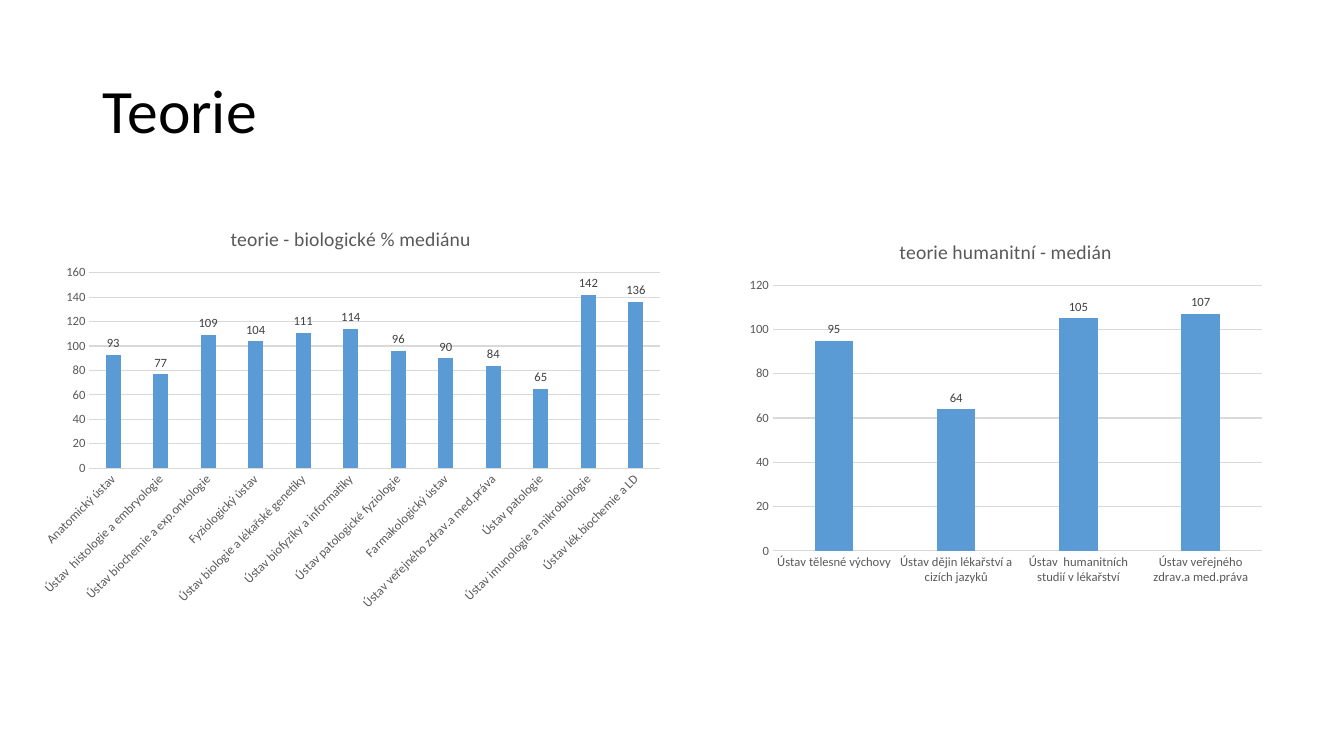
import pptx
import pptx.util
import pptx.chart.data
import pptx.dml.color
import pptx.enum.chart
import pptx.enum.text

Inches = pptx.util.Inches
Pt = pptx.util.Pt
FONT = "Calibri"
COLORS = {
    "heading": "000000",
    "bar": "5B9BD5",
    "axis text": "595959",
    "value text": "404040",
    "grid": "D9D9D9",
}


def rgb(name):
    return pptx.dml.color.RGBColor.from_string(COLORS[name])


def style_font(font, size, color):
    font.name = FONT
    font.size = Pt(size)
    font.bold = False
    font.color.rgb = rgb(color)


presentation = pptx.Presentation()
presentation.slide_width = Inches(13.33)
presentation.slide_height = Inches(7.5)
slide = presentation.slides.add_slide(presentation.slide_layouts[5])

# Heading
heading = slide.shapes.title
heading.left, heading.top = Inches(0.92), Inches(0.4)
heading.width, heading.height = Inches(11.5), Inches(1.45)
heading.text_frame.vertical_anchor = pptx.enum.text.MSO_ANCHOR.MIDDLE
heading_line = heading.text_frame.paragraphs[0]
heading_line.alignment = pptx.enum.text.PP_ALIGN.LEFT
heading_line.line_spacing = 0.9
heading_run = heading_line.add_run()
heading_run.text = "Teorie"
style_font(heading_run.font, 44, "heading")

# Median values per institute; the label angle is in 1/60000 degree
institute_groups = [
    {
        "title": "teorie - biologické % mediánu",
        "place": (0.29, 2.06, 6.38, 4.08),
        "format": "0",
        "top": 160,
        "angle": -45 * 60000,
        "medians": {
            "Anatomický ústav": 93,
            "Ústav  histologie a embryologie": 77,
            "Ústav biochemie a exp.onkologie": 109,
            "Fyziologický ústav": 104,
            "Ústav biologie a lékařské genetiky": 111,
            "Ústav biofyziky a informatiky": 114,
            "Ústav patologické fyziologie": 96,
            "Farmakologický ústav": 90,
            "Ústav veřejného zdrav.a med.práva": 84,
            "Ústav patologie": 65,
            "Ústav imunologie a mikrobiologie": 142,
            "Ústav lék.biochemie a LD": 136,
        },
    },
    {
        "title": "teorie humanitní - medián",
        "place": (7.33, 2.2, 5.29, 3.67),
        "format": "#,##0",
        "top": 120,
        "angle": 0,
        "medians": {
            "Ústav tělesné výchovy": 95,
            "Ústav dějin lékařství a cizích jazyků": 64,
            "Ústav  humanitních studií v lékařství": 105,
            "Ústav veřejného zdrav.a med.práva": 107,
        },
    },
]

# Column charts
for group in institute_groups:
    medians = pptx.chart.data.CategoryChartData(number_format=group["format"])
    medians.categories = list(group["medians"])
    medians.add_series("Series 1", list(group["medians"].values()))
    chart = slide.shapes.add_chart(
        pptx.enum.chart.XL_CHART_TYPE.COLUMN_CLUSTERED,
        *[Inches(length) for length in group["place"]],
        medians,
    ).chart
    style_font(chart.font, 10, "heading")
    chart.has_legend = False

    # Chart title
    chart.has_title = True
    chart.chart_title.include_in_layout = False
    title_run = chart.chart_title.text_frame.paragraphs[0].add_run()
    title_run.text = group["title"]
    style_font(title_run.font, 14, "axis text")

    # Axes and gridlines
    institute_axis, median_axis = chart.category_axis, chart.value_axis
    for axis in (institute_axis, median_axis):
        axis.major_tick_mark = pptx.enum.chart.XL_TICK_MARK.NONE
        axis.minor_tick_mark = pptx.enum.chart.XL_TICK_MARK.NONE
        style_font(axis.tick_labels.font, 9, "axis text")
    institute_axis._element.txPr.bodyPr.set("rot", str(group["angle"]))
    median_axis.minimum_scale = 0
    median_axis.maximum_scale = group["top"]
    median_axis.major_unit = 20
    median_axis.tick_labels.number_format = group["format"]
    median_axis.tick_labels.number_format_is_linked = False
    median_axis.format.line.fill.background()
    median_axis.has_major_gridlines = True
    for line in (institute_axis.format.line, median_axis.major_gridlines.format.line):
        line.color.rgb = rgb("grid")
        line.width = Pt(0.75)

    # Columns and their values
    plot = chart.plots[0]
    plot.vary_by_categories = False
    plot.gap_width = 219
    plot.overlap = -27
    columns = plot.series[0]
    columns.format.fill.solid()
    columns.format.fill.fore_color.rgb = rgb("bar")
    columns.invert_if_negative = False
    values = columns.data_labels
    values.show_value = True
    values.number_format = group["format"]
    values.number_format_is_linked = False
    values.position = pptx.enum.chart.XL_LABEL_POSITION.OUTSIDE_END
    style_font(values.font, 9, "value text")

presentation.save("out.pptx")
